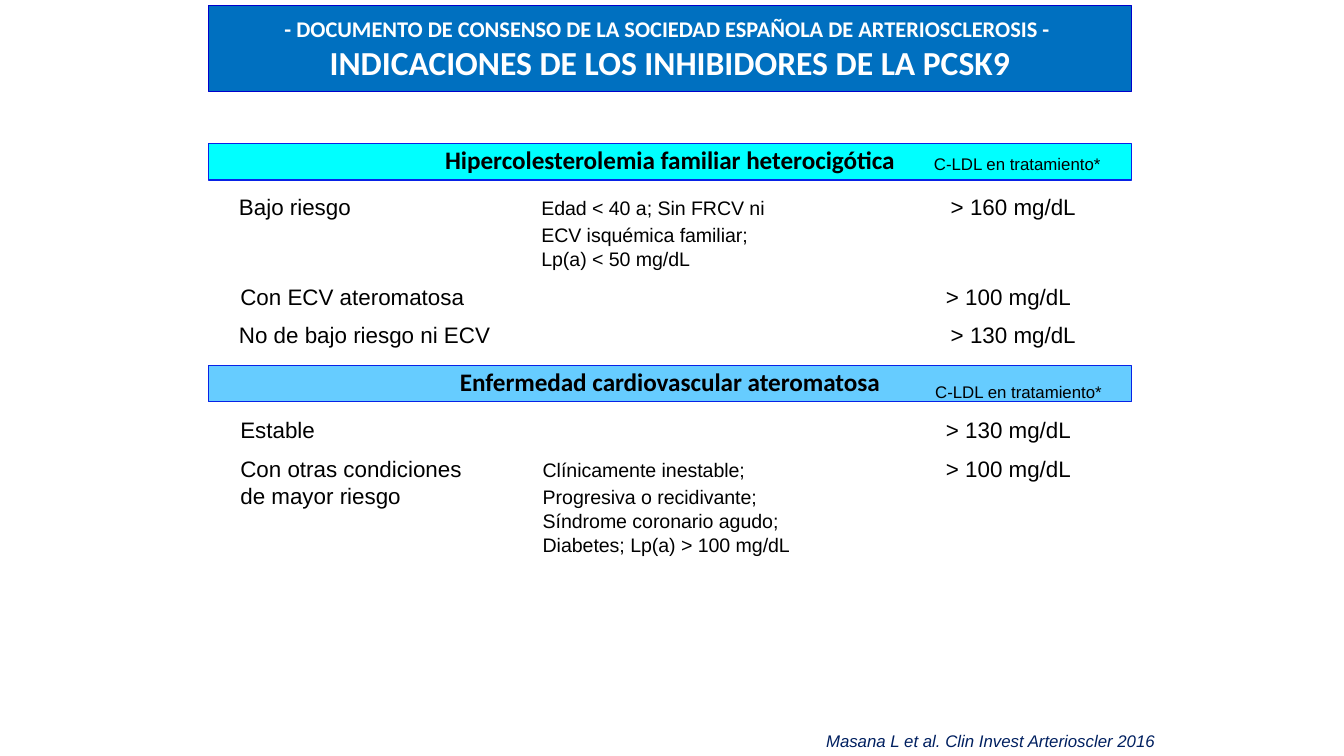
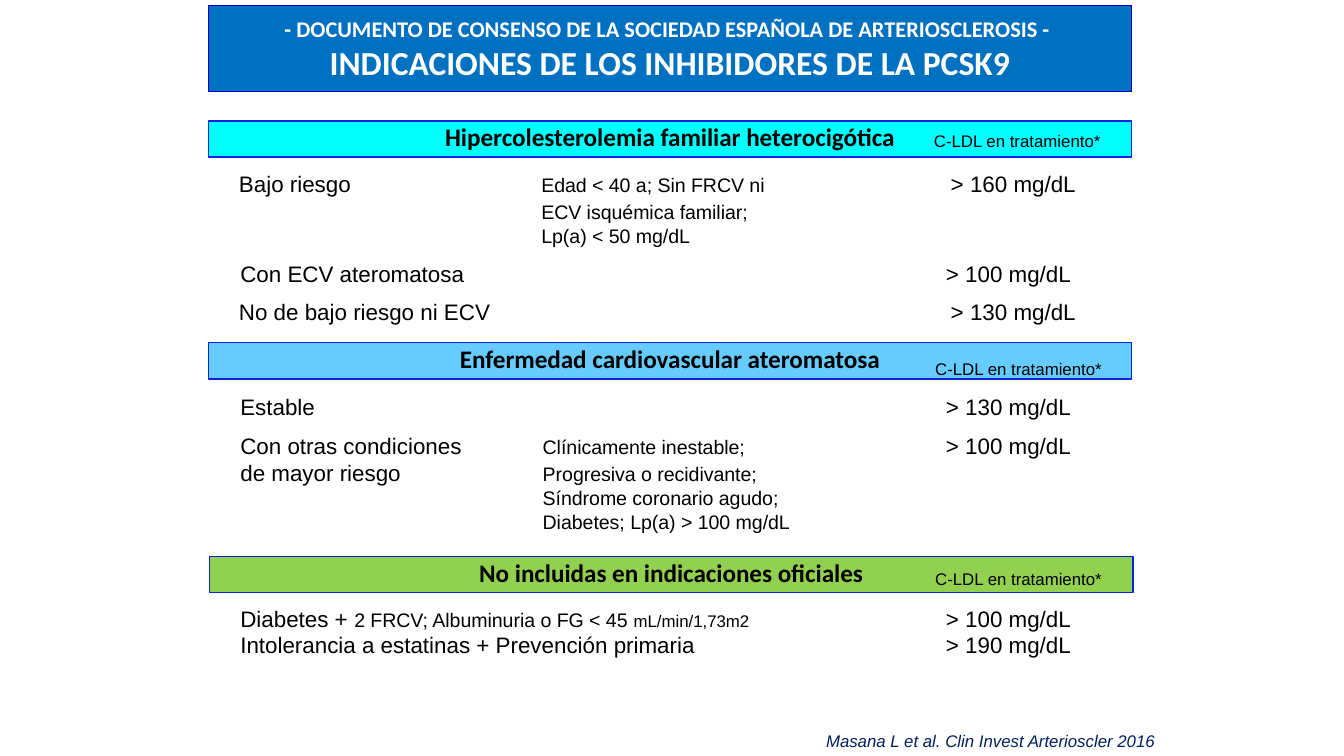
"""Build two slides on the indications of PCSK9 inhibitors."""
from dataclasses import dataclass

from lxml import etree
from pptx import Presentation
from pptx.dml.color import RGBColor
from pptx.enum.shapes import MSO_SHAPE
from pptx.enum.text import MSO_ANCHOR, MSO_AUTO_SIZE, PP_ALIGN
from pptx.oxml.ns import qn
from pptx.util import Inches, Pt

RECT = MSO_SHAPE.RECTANGLE
TOP, MIDDLE = MSO_ANCHOR.TOP, MSO_ANCHOR.MIDDLE
CENTER, RIGHT = PP_ALIGN.CENTER, PP_ALIGN.RIGHT
FIXED = MSO_AUTO_SIZE.NONE

WHITE = RGBColor(0xFF, 0xFF, 0xFF)
BLACK = RGBColor(0x00, 0x00, 0x00)
BLUE = RGBColor(0x00, 0x70, 0xC0)
EDGE = RGBColor(0x00, 0x00, 0xCC)
RIM = RGBColor(0x08, 0x22, 0xE6)
NAVY = RGBColor(0x00, 0x20, 0x60)
CYAN = RGBColor(0x00, 0xFF, 0xFF)
SKY = RGBColor(0x66, 0xCC, 0xFF)
GREEN = RGBColor(0x92, 0xD0, 0x50)

HEAD, BODY = "Calibri", "Arial"
PAGE_W = Inches(10)
PAGE_H = PAGE_W * 9 // 16
LEFT, WIDTH = 1.55, 6.87
BIG, MID, SMALL, BAR = 12, 10.5, 9, 13.5
ROW_TABS = (2.25, 5.25)
NOTE_TABS = (5.18,)

Line = list[tuple[str, float]]


@dataclass(frozen=True)
class Row:
    """Lines of text placed below a band."""
    left: float
    drop: float
    height: float
    lines: list[Line]


@dataclass(frozen=True)
class Band:
    """Coloured heading with its rows and the place of its note."""
    title: str
    fill: RGBColor
    left: float
    note: tuple[float, float]
    rows: list[Row]


FAMILY = Band("Hipercolesterolemia familiar heterocigótica", CYAN, LEFT, (1.67, -0.04), [
    Row(1.68, 0.32, 0.68, [
        [("Bajo riesgo\t", BIG), ("Edad < 40 a; Sin FRCV ni ", MID), ("\t > 160 mg/dL", BIG)],
        [("\t", BIG), ("ECV isquémica familiar;", MID)],
        [("\tLp(a) < 50 mg/dL", MID)],
    ]),
    Row(1.69, 0.99, 0.3, [[("Con ECV ateromatosa\t\t> 100 mg/dL", BIG)]]),
    Row(1.68, 1.27, 0.3, [[("No de bajo riesgo ni ECV\t\t > 130 mg/dL", BIG)]]),
])

HEART = Band("Enfermedad cardiovascular ateromatosa", SKY, LEFT, (1.68, 0.01), [
    Row(1.69, 0.33, 0.3, [[("Estable\t\t> 130 mg/dL", BIG)]]),
    Row(1.69, 0.62, 0.86, [
        [("Con otras condiciones\t", BIG), ("Clínicamente inestable;", MID), ("\t> 100 mg/dL", BIG)],
        [("de mayor riesgo\t", BIG), ("Progresiva o recidivante;", MID)],
        [("\tSíndrome coronario agudo;", MID)],
        [("\tDiabetes; Lp(a) > 100 mg/dL", MID)],
    ]),
])

OTHER = Band("No incluidas en indicaciones oficiales", GREEN, 1.56, (1.68, -0.02), [
    Row(1.69, 0.31, 0.5, [
        [("Diabetes + ", BIG), ("2 FRCV; Albuminuria o FG < 45 ", MID),
         ("mL/min/1,73m2", SMALL), ("\t> 100 mg/dL", BIG)],
        [("Intolerancia a estatinas + Prevención primaria\t> 190 mg/dL", BIG)],
    ]),
])

PAGES = [
    [(1.07, FAMILY), (2.72, HEART)],
    [(0.9, FAMILY), (2.55, HEART), (4.14, OTHER)],
]


def style(run, size: float, face: str, color: RGBColor, bold: bool = False) -> None:
    """Format one run."""
    run.font.size = Pt(size)
    run.font.name = face
    run.font.color.rgb = color
    run.font.bold = bold


def paint(shape, fill: RGBColor, line: RGBColor) -> None:
    """Give a shape its fill and outline."""
    shape.fill.solid()
    shape.fill.fore_color.rgb = fill
    shape.line.color.rgb = line
    shape.line.width = Pt(0.75)


def set_tabs(para, stops: tuple[float, ...]) -> None:
    """Add left tab stops to a paragraph."""
    tabs = etree.SubElement(para._p.get_or_add_pPr(), qn("a:tabLst"))
    for stop in stops:
        etree.SubElement(tabs, qn("a:tab"), pos=str(int(Inches(stop))), algn="l")


def add_text(slide, left: float, top: float, width: float, height: float,
             lines: list[Line], stops: tuple[float, ...] = (), color: RGBColor = BLACK):
    """Add a text box of mixed-size lines and return its frame."""
    box = slide.shapes.add_textbox(Inches(left), Inches(top), Inches(width), Inches(height))
    frame = box.text_frame
    frame.word_wrap = True
    for i, line in enumerate(lines):
        para = frame.paragraphs[0] if i == 0 else frame.add_paragraph()
        if stops:
            set_tabs(para, stops)
        for text, size in line:
            run = para.add_run()
            run.text = text
            style(run, size, BODY, color)
    return frame


def add_title(slide) -> None:
    """Fill the title placeholder as the top banner."""
    title = slide.shapes.title
    title.left, title.top = Inches(LEFT), Inches(0.04)
    title.width, title.height = Inches(WIDTH), Inches(0.64)
    paint(title, BLUE, EDGE)
    frame = title.text_frame
    frame.text = ("- DOCUMENTO DE CONSENSO DE LA SOCIEDAD ESPAÑOLA DE ARTERIOSCLEROSIS - \n"
                  "INDICACIONES DE LOS INHIBIDORES DE LA PCSK9")
    frame.auto_size = FIXED
    frame.word_wrap = True
    frame.vertical_anchor = MIDDLE
    for para, size in zip(frame.paragraphs, (12, 18)):
        para.alignment = CENTER
        style(para.runs[0], size, HEAD, WHITE, True)


def add_band(slide, top: float, band: Band) -> None:
    """Draw a band, its note and its rows."""
    bar = slide.shapes.add_shape(RECT, Inches(band.left), Inches(top), Inches(WIDTH), Inches(0.27))
    bar.shadow.inherit = False
    paint(bar, band.fill, RIM)
    frame = bar.text_frame
    frame.margin_left = frame.margin_right = Inches(0.07)
    frame.margin_top = frame.margin_bottom = Inches(0.04)
    frame.vertical_anchor = TOP
    frame.word_wrap = True
    frame.text = band.title
    para = frame.paragraphs[0]
    para.alignment = CENTER
    para.line_spacing = 0.85
    style(para.runs[0], BAR, HEAD, BLACK, True)
    left, drop = band.note
    add_text(slide, left, top + drop, 6.99, 0.33,
             [[("\t", BAR), ("C-LDL en tratamiento*", SMALL)]], NOTE_TABS)
    for row in band.rows:
        add_text(slide, row.left, top + row.drop, WIDTH, row.height, row.lines, ROW_TABS)


def add_source(slide) -> None:
    """Add the citation at the foot."""
    frame = add_text(slide, 5.59, 5.39, 3.1, 0.25,
                     [[("Masana L et al. Clin Invest Arterioscler 2016", SMALL)]], color=NAVY)
    para = frame.paragraphs[0]
    para.alignment = RIGHT
    para.runs[0].font.italic = True


def main() -> None:
    """Build and save the deck."""
    deck = Presentation()
    deck.slide_width, deck.slide_height = PAGE_W, PAGE_H
    for page in PAGES:
        slide = deck.slides.add_slide(deck.slide_layouts[5])
        add_title(slide)
        for top, band in page:
            add_band(slide, top, band)
        add_source(slide)
    deck.save("out.pptx")


if __name__ == "__main__":
    main()
